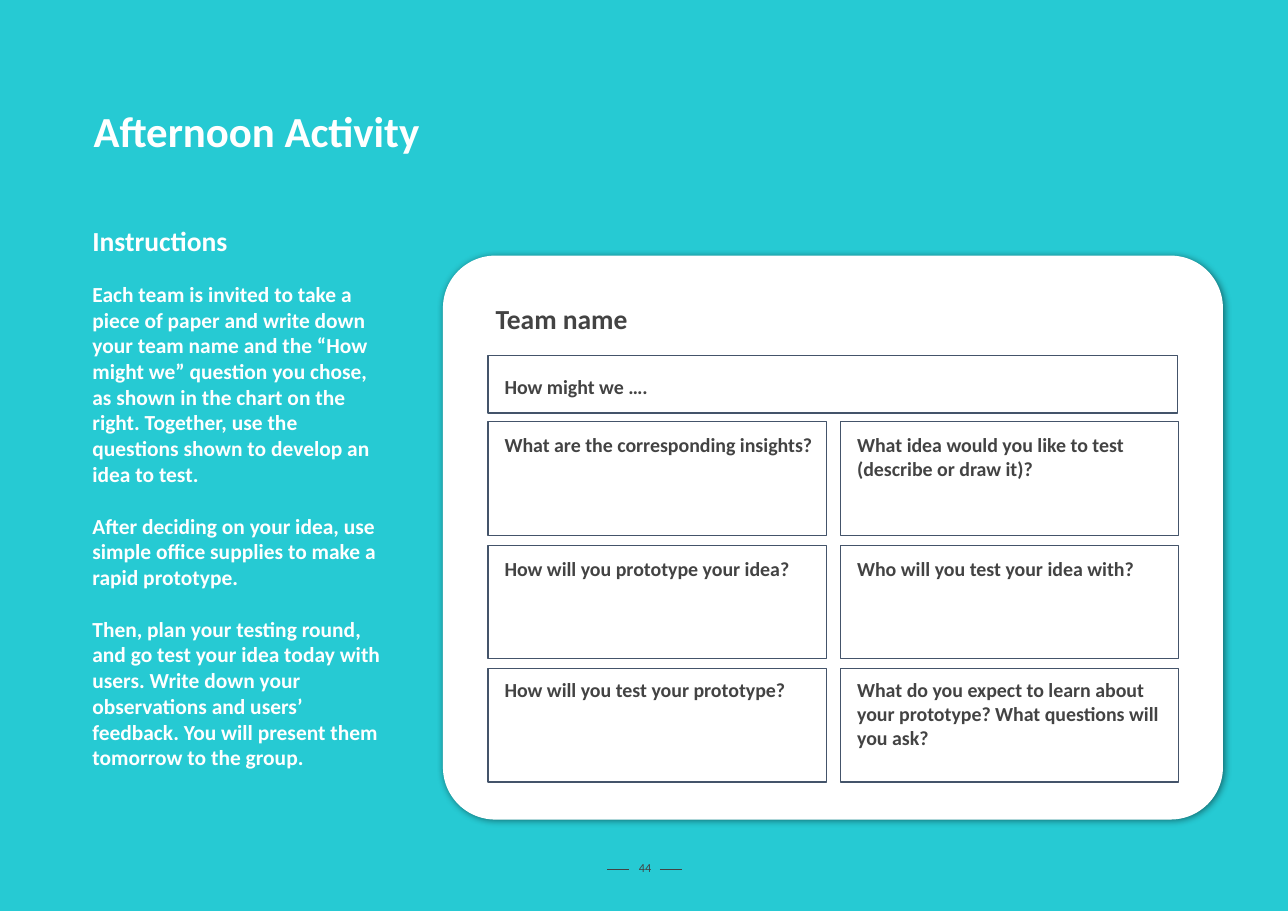
from lxml import etree
from pptx import Presentation
from pptx import util as u
from pptx.dml.color import RGBColor
from pptx.enum import shapes, text
from pptx.oxml import parse_xml
from pptx.oxml.ns import nsdecls, qn

TITLE = "Afternoon Activity"
HEADING = "Instructions"
INSTRUCTIONS = [
    "Each team is invited to take a piece of paper and write down your team name "
    "and the “How might we” question you chose, as shown in the chart on the right. "
    "Together, use the questions shown to develop an idea to test.",
    "After deciding on your idea, use simple office supplies to make a rapid prototype.",
    "Then, plan your testing round, and go test your idea today with users. Write down "
    "your observations and users’ feedback. You will present them tomorrow to the group.",
]
CARD_TITLE = "Team name"
CHALLENGE = "How might we …."
QUESTIONS = [
    ("What are the corresponding insights?",
     "What idea would you like to test\v(describe or draw it)?"),
    ("How will you prototype your idea?", "Who will you test your idea with?"),
    ("How will you test your prototype?",
     "What do you expect to learn about your prototype? What questions will you ask?"),
]
PAGE_NUMBER = "44"

TURQUOISE = RGBColor(0x26, 0xCA, 0xD3)
WHITE = RGBColor(0xFF, 0xFF, 0xFF)
CHARCOAL = RGBColor(0x43, 0x43, 0x43)
SLATE = RGBColor(0x44, 0x54, 0x6A)
FONT = "Calibri"

PX = 9144
GRID_LEFT, GRID_TOP = 443, 383
CELL_WIDTH, CELL_HEIGHT = 307, 103
COLUMN_STEP, ROW_STEP = 320, 112
TOP_INSETS = [10, 10, 8]

SHADOW = (
    f'<a:effectLst {nsdecls("a")}>'
    '<a:outerShdw blurRad="57150" dist="19050" dir="2640000" algn="bl" rotWithShape="0">'
    '<a:srgbClr val="000000"><a:alpha val="49000"/></a:srgbClr>'
    '</a:outerShdw></a:effectLst>'
)


def px(*lengths):
    return [u.Emu(length * PX) for length in lengths]


def write(shape, paragraphs, size, color, bold=True, insets=(10, 10, 10, 10),
          anchor=text.MSO_ANCHOR.TOP, align=text.PP_ALIGN.LEFT, leading=1.0, gap=0):
    frame = shape.text_frame
    frame.word_wrap = True
    frame.vertical_anchor = anchor
    (frame.margin_left, frame.margin_top,
     frame.margin_right, frame.margin_bottom) = px(*insets)
    for index, words in enumerate(paragraphs):
        para = frame.add_paragraph() if index else frame.paragraphs[0]
        para.text = words
        para.alignment = align
        para.line_spacing = leading
        if index:
            para.space_before = u.Pt(gap)
        para.font.name = FONT
        para.font.size = u.Pt(size)
        para.font.bold = bold
        para.font.color.rgb = color


def add_text(page, at, paragraphs, size, color, **style):
    write(page.shapes.add_textbox(*px(*at)), paragraphs, size, color, **style)


def add_answer_box(page, at, question, top_inset):
    box = page.shapes.add_shape(shapes.MSO_SHAPE.RECTANGLE, *px(*at))
    box.shadow.inherit = False
    box.fill.background()
    box.line.color.rgb = SLATE
    box.line.width = u.Pt(0.75)
    write(box, [question], 13, CHARCOAL, insets=(15, top_inset, 10, 5))


def add_card(page):
    card = page.shapes.add_shape(shapes.MSO_SHAPE.ROUNDED_RECTANGLE, *px(402, 232, 708, 512))
    card.adjustments[0] = 0.093
    card.fill.solid()
    card.fill.fore_color.rgb = WHITE
    card.line.fill.background()
    card._element.spPr.append(parse_xml(SHADOW))
    add_text(page, (440, 264, 163, 52), [CARD_TITLE], 18, CHARCOAL)
    add_answer_box(page, (GRID_LEFT, 323, 626, 52), CHALLENGE, 17)
    for row, (questions, inset) in enumerate(zip(QUESTIONS, TOP_INSETS)):
        for column, question in enumerate(questions):
            at = (GRID_LEFT + column * COLUMN_STEP, GRID_TOP + row * ROW_STEP,
                  CELL_WIDTH, CELL_HEIGHT)
            add_answer_box(page, at, question, inset)


def add_footer(page):
    add_text(page, (568, 776, 35, 26), [PAGE_NUMBER], 8, CHARCOAL, bold=False,
             anchor=text.MSO_ANCHOR.MIDDLE, align=text.PP_ALIGN.CENTER, leading=0.8)
    for left in (551, 599):
        dash = page.shapes.add_connector(
            shapes.MSO_CONNECTOR.STRAIGHT, *px(left, 789, left + 20, 789))
        dash.line.color.rgb = CHARCOAL
        dash.line.width = u.Pt(0.75)
        etree.SubElement(dash._element.spPr, qn("a:effectLst"))


def main():
    deck = Presentation()
    deck.slide_width, deck.slide_height = px(1169, 827)
    page = deck.slides.add_slide(deck.slide_layouts[6])
    page.background.fill.solid()
    page.background.fill.fore_color.rgb = TURQUOISE
    add_text(page, (74, 83, 865, 77), [TITLE], 28, WHITE, insets=(11, 6, 11, 6),
             anchor=text.MSO_ANCHOR.MIDDLE, leading=0.86)
    add_text(page, (74, 193, 600, 52), [HEADING], 18, WHITE)
    add_text(page, (74, 245, 285, 468), INSTRUCTIONS, 14, WHITE, gap=17)
    add_card(page)
    add_footer(page)
    deck.save("out.pptx")


if __name__ == "__main__":
    main()
